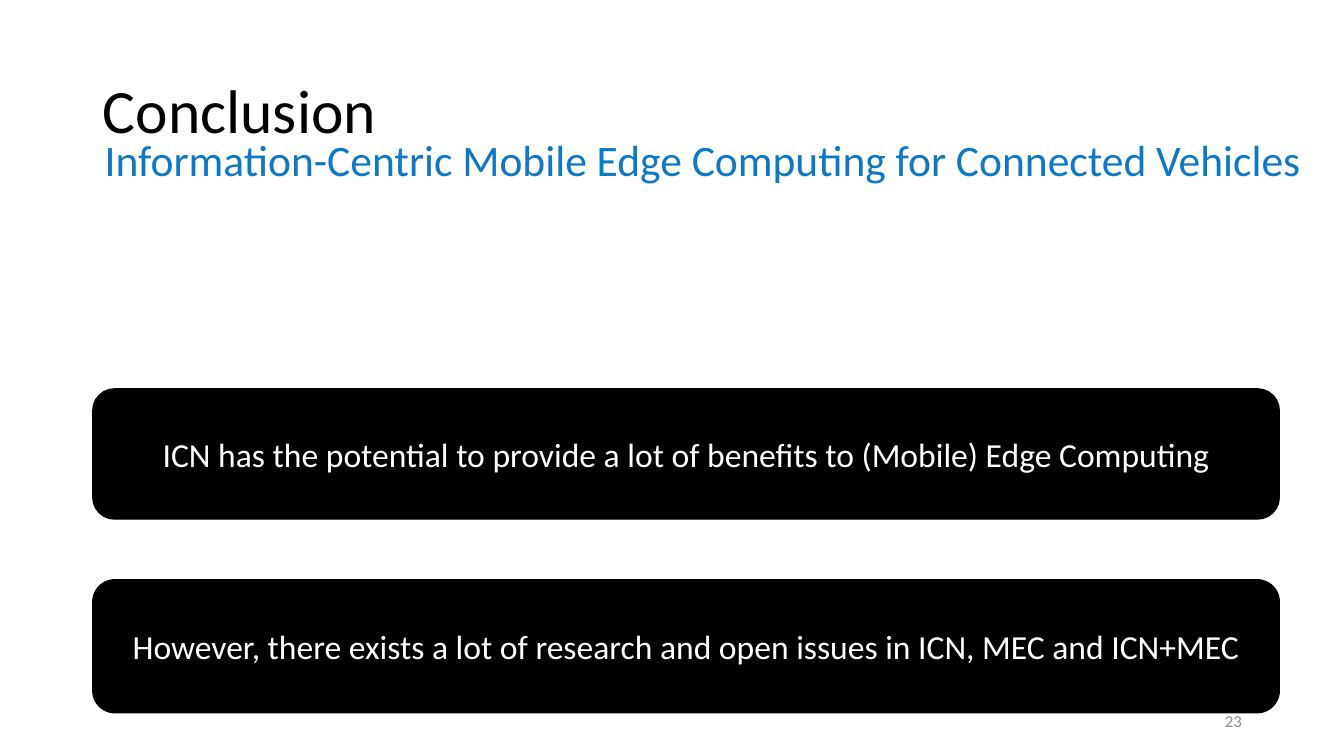
import pptx
import pptx.dml.color
import pptx.enum.shapes
import pptx.enum.text
import pptx.util
from dataclasses import dataclass

Cm = pptx.util.Cm
Pt = pptx.util.Pt
ALIGN = pptx.enum.text.PP_ALIGN
ANCHOR = pptx.enum.text.MSO_ANCHOR


@dataclass(frozen=True)
class Theme:
    font: str = "Calibri"
    black: str = "000000"
    white: str = "FFFFFF"
    blue: str = "0E78C5"
    grey: str = "8C8C8C"
    title: float = 44
    subtitle: float = 31.1
    body: float = 24
    number: float = 12


THEME = Theme()
LEFT = Cm(2.34)


def rgb(value):
    return pptx.dml.color.RGBColor.from_string(value)


def apply(target, formats):
    for name, value in formats.items():
        setattr(target, name, value)


def write(sp, text, size, color, align=ALIGN.LEFT, spacing=1.0, **frame):
    tf = sp.text_frame
    apply(tf, {"word_wrap": True, "auto_size": pptx.enum.text.MSO_AUTO_SIZE.NONE,
               "vertical_anchor": ANCHOR.MIDDLE, **frame})
    p = tf.paragraphs[0]
    apply(p, {"alignment": align, "line_spacing": spacing})
    r = p.add_run()
    r.text = text
    apply(r.font, {"name": THEME.font, "size": Pt(size)})
    r.font.color.rgb = rgb(color)


def add_title(s, text):
    sp = s.shapes.title
    apply(sp, {"left": LEFT, "top": Cm(1.02), "width": Cm(29.21), "height": Cm(3.68)})
    write(sp, text, THEME.title, THEME.black, spacing=0.9)


def add_subtitle(s, text):
    sp = s.shapes.add_textbox(Cm(2.64), Cm(3.51), Cm(32.26), Cm(1.19))
    margins = {f"margin_{side}": 0 for side in ("left", "top", "right", "bottom")}
    write(sp, text, THEME.subtitle, THEME.blue, spacing=0.89,
          vertical_anchor=ANCHOR.TOP, **margins)


def add_statement(s, text, top, height):
    sp = s.shapes.add_shape(pptx.enum.shapes.MSO_SHAPE.ROUNDED_RECTANGLE,
                            LEFT, top, Cm(29.9), height)
    sp.shadow.inherit = False
    for fill in (sp.fill, sp.line.fill):
        fill.solid()
        fill.fore_color.rgb = rgb(THEME.black)
    sp.line.width = Pt(1)
    write(sp, text, THEME.body, THEME.white, ALIGN.CENTER)


def add_number(s, text):
    sp = s.shapes.add_textbox(Cm(23.93), Cm(17.65), Cm(7.62), Cm(1.02))
    write(sp, text, THEME.number, THEME.grey, ALIGN.RIGHT)


def main():
    prs = pptx.Presentation()
    apply(prs, {"slide_width": Cm(33.87), "slide_height": Cm(19.05)})
    s = prs.slides.add_slide(prs.slide_layouts.get_by_name("Title Only"))
    add_title(s, "Conclusion")
    add_subtitle(s, "Information-Centric Mobile Edge Computing for Connected Vehicles")
    add_statement(s, "ICN has the potential to provide a lot of benefits to (Mobile) Edge Computing",
                  Cm(9.8), Cm(3.28))
    add_statement(s, "However, there exists a lot of research and open issues in ICN, MEC and ICN+MEC",
                  Cm(14.61), Cm(3.35))
    add_number(s, "23")
    prs.save("out.pptx")


if __name__ == "__main__":
    main()
